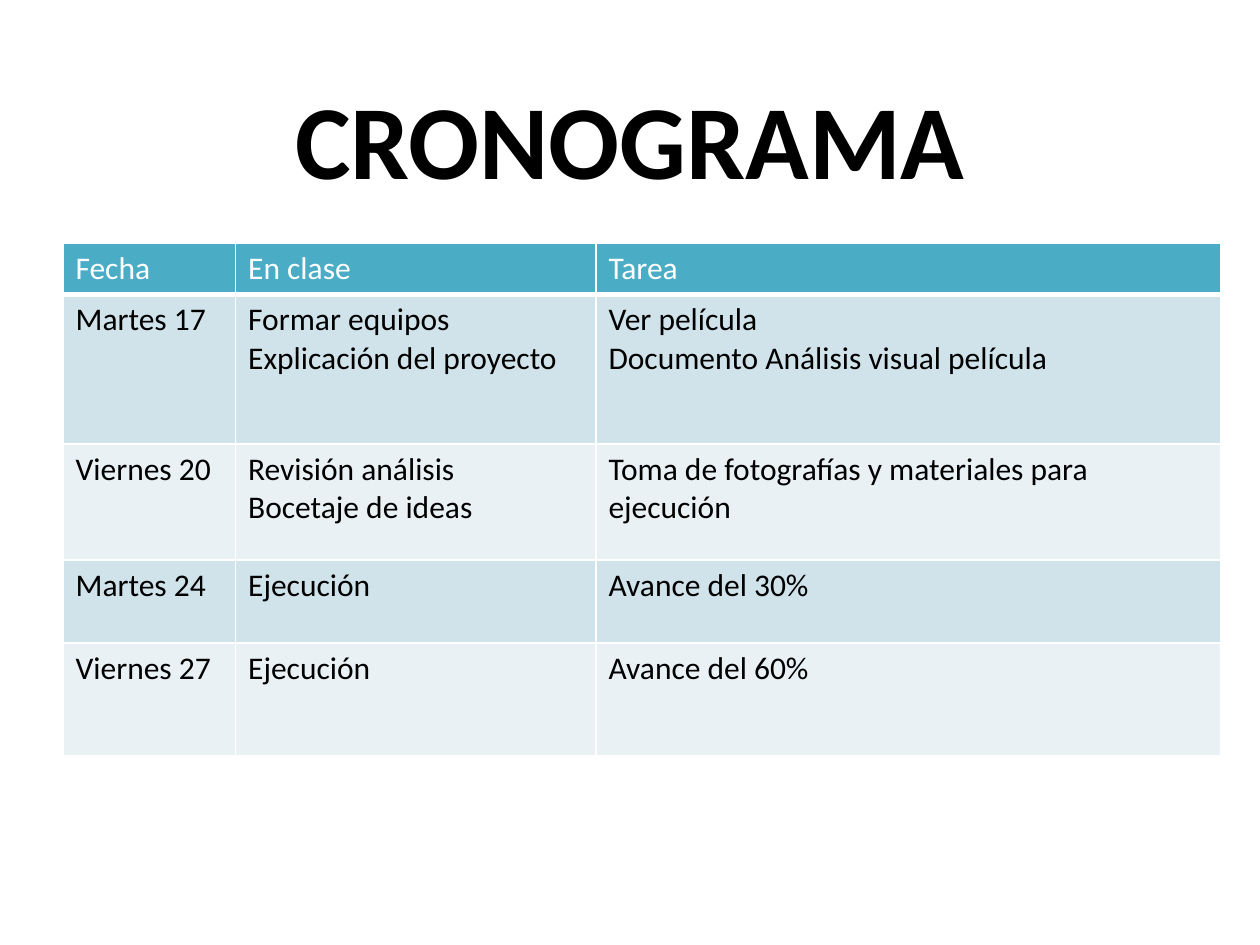
from lxml.etree import SubElement
from pptx import Presentation
from pptx.dml.color import RGBColor
from pptx.enum.text import MSO_ANCHOR, PP_ALIGN
from pptx.oxml.ns import qn
from pptx.util import Inches, Pt

TITLE = "CRONOGRAMA"
SCHEDULE = [
    ("Fecha", "En clase", "Tarea"),
    ("Martes 17", "Formar equipos\nExplicación del proyecto",
     "Ver película\nDocumento Análisis visual película"),
    ("Viernes 20", "Revisión análisis\nBocetaje de ideas",
     "Toma de fotografías y materiales para ejecución"),
    ("Martes 24", "Ejecución", "Avance del 30%"),
    ("Viernes 27", "Ejecución", "Avance del 60%"),
]
COLUMN_WIDTHS = [1.37, 2.86, 4.96]
ROW_HEIGHTS = [0.4, 1.19, 0.92, 0.66, 0.89]
HEADER_FILL = "4BACC6"
BAND_FILLS = ["E9F1F5", "D0E3EA"]
WHITE, BLACK = "FFFFFF", "000000"


def set_font(paragraph, size, color, bold=False):
    font = paragraph.font
    font.name = "Calibri"
    font.size = Pt(size)
    font.bold = bold
    font.color.rgb = RGBColor.from_string(color)


def add_borders(cell, bottom_width):
    properties = cell._tc.get_or_add_tcPr()
    widths = {"a:lnL": 1, "a:lnR": 1, "a:lnT": 1, "a:lnB": bottom_width}
    for side, width in widths.items():
        line = SubElement(properties, qn(side), w=str(Pt(width)))
        fill = SubElement(line, qn("a:solidFill"))
        SubElement(fill, qn("a:srgbClr"), val=WHITE)


def add_title(slide):
    title = slide.shapes.title
    title.left, title.top = Inches(0.5), Inches(0.52)
    title.width, title.height = Inches(9), Inches(1.14)
    title.text_frame.text = TITLE
    title.text_frame.vertical_anchor = MSO_ANCHOR.MIDDLE
    paragraph = title.text_frame.paragraphs[0]
    paragraph.alignment = PP_ALIGN.CENTER
    set_font(paragraph, 60, BLACK, bold=True)


def add_schedule(slide):
    table = slide.shapes.add_table(
        len(SCHEDULE), len(COLUMN_WIDTHS), Inches(0.5), Inches(1.93),
        Inches(sum(COLUMN_WIDTHS)), Inches(sum(ROW_HEIGHTS))).table
    for column, width in zip(table.columns, COLUMN_WIDTHS):
        column.width = Inches(width)
    for row, height in zip(table.rows, ROW_HEIGHTS):
        row.height = Inches(height)

    for row_index, texts in enumerate(SCHEDULE):
        is_header = row_index == 0
        fill_color = HEADER_FILL if is_header else BAND_FILLS[row_index % 2]
        for column_index, text in enumerate(texts):
            cell = table.cell(row_index, column_index)
            cell.text = text
            add_borders(cell, bottom_width=3 if is_header else 1)
            cell.fill.solid()
            cell.fill.fore_color.rgb = RGBColor.from_string(fill_color)
            for paragraph in cell.text_frame.paragraphs:
                set_font(paragraph, 18, WHITE if is_header else BLACK)


def main():
    deck = Presentation()
    deck.slide_width, deck.slide_height = Inches(10), Inches(7.5)
    slide = deck.slides.add_slide(deck.slide_layouts[5])
    add_title(slide)
    add_schedule(slide)
    deck.save("out.pptx")


if __name__ == "__main__":
    main()
